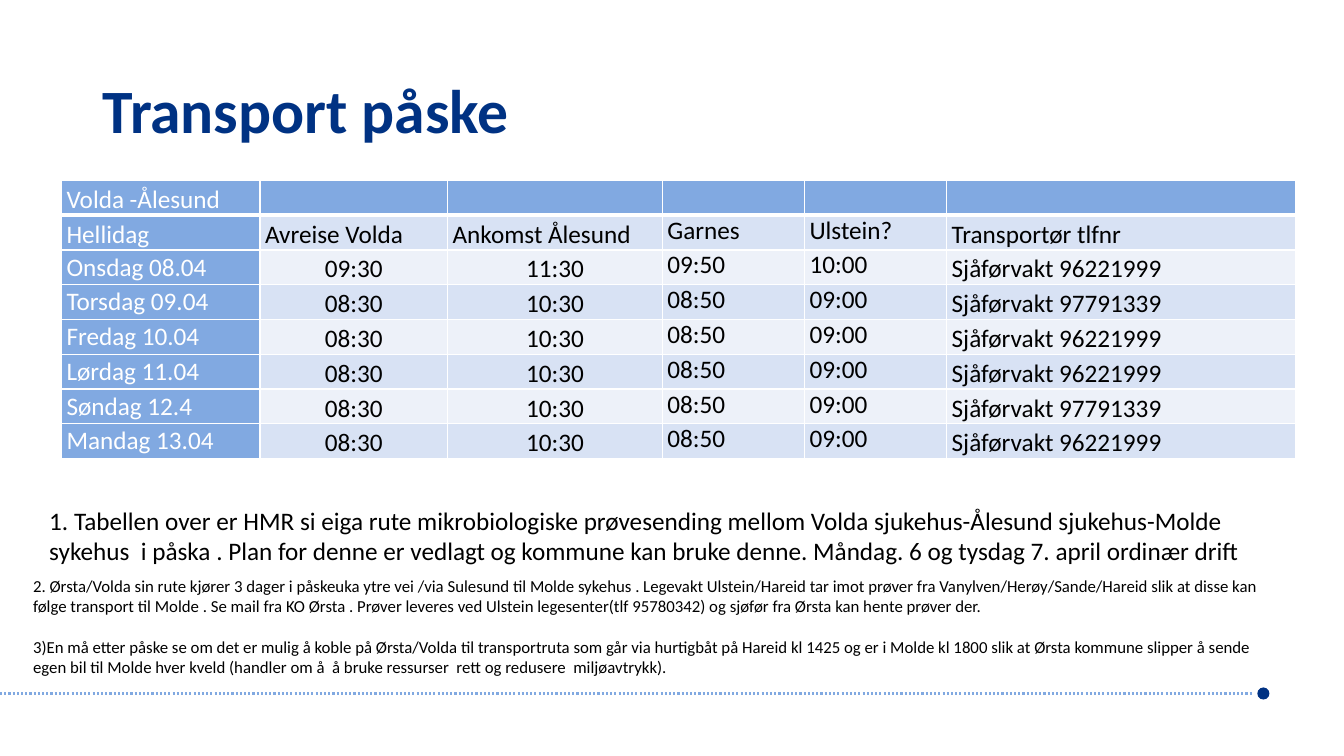
from lxml import etree
from pptx import Presentation, util as u
from pptx.dml.color import RGBColor
from pptx.enum import dml, shapes, text
from pptx.oxml import ns

NAVY = RGBColor(0x00, 0x32, 0x83)
BLUE = RGBColor(0x81, 0xA9, 0xE1)
BAND_DARK = RGBColor(0xD8, 0xE2, 0xF4)
BAND_LIGHT = RGBColor(0xED, 0xF1, 0xF9)
WHITE = RGBColor(0xFF, 0xFF, 0xFF)
BLACK = RGBColor(0x00, 0x00, 0x00)
TOP, MIDDLE, BOTTOM = text.MSO_ANCHOR.TOP, text.MSO_ANCHOR.MIDDLE, text.MSO_ANCHOR.BOTTOM


def write(frame, words, size=18, color=BLACK, bold=False, align=text.PP_ALIGN.LEFT,
          line_spacing=None, gap=0):
    """Fill a text frame, one paragraph per line; gap is the space between them."""
    frame.word_wrap = True
    frame.text = words
    for index, paragraph in enumerate(frame.paragraphs):
        paragraph.alignment = align
        paragraph.line_spacing = line_spacing
        if index:
            paragraph.space_before = u.Pt(gap)
        font = paragraph.runs[0].font
        font.name, font.size, font.bold = "Calibri", u.Pt(size), bold
        font.color.rgb = color


def add_borders(cell, bottom=1):
    properties = cell._tc.get_or_add_tcPr()
    for side, width in (("L", 1), ("R", 1), ("T", 1), ("B", bottom)):
        line = etree.SubElement(properties, ns.qn(f"a:ln{side}"), w=str(u.Pt(width)))
        fill = etree.SubElement(line, ns.qn("a:solidFill"))
        etree.SubElement(fill, ns.qn("a:srgbClr"), val=str(WHITE))


deck = Presentation()
deck.slide_width, deck.slide_height = u.Inches(13.33), u.Inches(7.5)
slide = deck.slides.add_slide(deck.slide_layouts[6])

# Dotted footer rule ending in a dot
rule = slide.shapes.add_connector(shapes.MSO_CONNECTOR.STRAIGHT, u.Inches(0), u.Inches(6.88),
                                  u.Inches(12.42), u.Inches(6.88))
rule.line.color.rgb = BLUE
rule.line.width = u.Pt(1.5)
rule.line.dash_style = dml.MSO_LINE.ROUND_DOT
etree.SubElement(rule._element.spPr, ns.qn("a:effectLst"))

dot = slide.shapes.add_shape(shapes.MSO_SHAPE.OVAL, u.Inches(12.47), u.Inches(6.82),
                             u.Inches(0.12), u.Inches(0.12))
dot.shadow.inherit = False
dot.fill.solid()
dot.fill.fore_color.rgb = NAVY
dot.line.fill.background()

# Title
title = slide.shapes.add_textbox(u.Inches(0.92), u.Inches(0.4), u.Inches(11.5), u.Inches(1.45))
title.text_frame.vertical_anchor = MIDDLE
write(title.text_frame, "Transport påske", size=44, color=NAVY, bold=True, line_spacing=0.9)

# Timetable
timetable_rows = [
    ("Volda -Ålesund", "", "", "", "", ""),
    ("Hellidag", "Avreise Volda", "Ankomst Ålesund", "Garnes", "Ulstein?", "Transportør tlfnr"),
    ("Onsdag 08.04", "09:30", "11:30", "09:50", "10:00", "Sjåførvakt 96221999"),
]
for day, phone in (("Torsdag 09.04", "97791339"), ("Fredag 10.04", "96221999"),
                   ("Lørdag 11.04", "96221999"), ("Søndag 12.4", "97791339"),
                   ("Mandag 13.04", "96221999")):
    timetable_rows.append((day, "08:30", "10:30", "08:50", "09:00", f"Sjåførvakt {phone}"))

column_widths = (1.97, 1.86, 2.13, 1.41, 1.41, 3.46)
timetable = slide.shapes.add_table(len(timetable_rows), len(column_widths), u.Inches(0.61),
                                   u.Inches(1.79), u.Inches(12.25), u.Inches(2.76)).table
for column, width in zip(timetable.columns, column_widths):
    column.width = u.Inches(width)

for r, row in enumerate(timetable_rows):
    for c, words in enumerate(row):
        cell = timetable.cell(r, c)
        cell.margin_left = cell.margin_right = u.Inches(0.05)
        cell.margin_top = cell.margin_bottom = 0
        heading = r == 0 or c == 0
        add_borders(cell, bottom=3 if r == 0 else 1)
        cell.fill.solid()
        cell.fill.fore_color.rgb = BLUE if heading else (BAND_LIGHT, BAND_DARK)[r % 2]
        if c in (3, 4):
            cell.vertical_anchor = TOP
        else:
            cell.vertical_anchor = MIDDLE if c == 0 and r > 1 else BOTTOM
        if words:
            centred = c in (1, 2) and r > 1
            write(cell.text_frame, words, color=WHITE if heading else BLACK,
                  align=text.PP_ALIGN.CENTER if centred else text.PP_ALIGN.LEFT)

# Notes under the timetable
route_notes = slide.shapes.add_textbox(u.Inches(0.23), u.Inches(5.66), u.Inches(12.5),
                                       u.Inches(1.31))
write(route_notes.text_frame,
      "2. Ørsta/Volda sin rute kjører 3 dager i påskeuka ytre vei /via Sulesund til Molde "
      "sykehus . Legevakt Ulstein/Hareid tar imot prøver fra Vanylven/Herøy/Sande/Hareid slik "
      "at disse kan følge transport til Molde . Se mail fra KO Ørsta . Prøver leveres ved "
      "Ulstein legesenter(tlf 95780342) og sjøfør fra Ørsta kan hente prøver der.\n"
      "3)En må etter påske se om det er mulig å koble på Ørsta/Volda til transportruta som går "
      "via hurtigbåt på Hareid kl 1425 og er i Molde kl 1800 slik at Ørsta kommune slipper å "
      "sende egen bil til Molde hver kveld (handler om å  å bruke ressurser  rett og redusere "
      " miljøavtrykk).",
      size=12, gap=14.6)

table_note = slide.shapes.add_textbox(u.Inches(0.39), u.Inches(4.96), u.Inches(12.46),
                                      u.Inches(0.71))
write(table_note.text_frame,
      "1. Tabellen over er HMR si eiga rute mikrobiologiske prøvesending mellom Volda "
      "sjukehus-Ålesund sjukehus-Molde sykehus  i påska . Plan for denne er vedlagt og kommune "
      "kan bruke denne. Måndag. 6 og tysdag 7. april ordinær drift")

deck.save("out.pptx")
